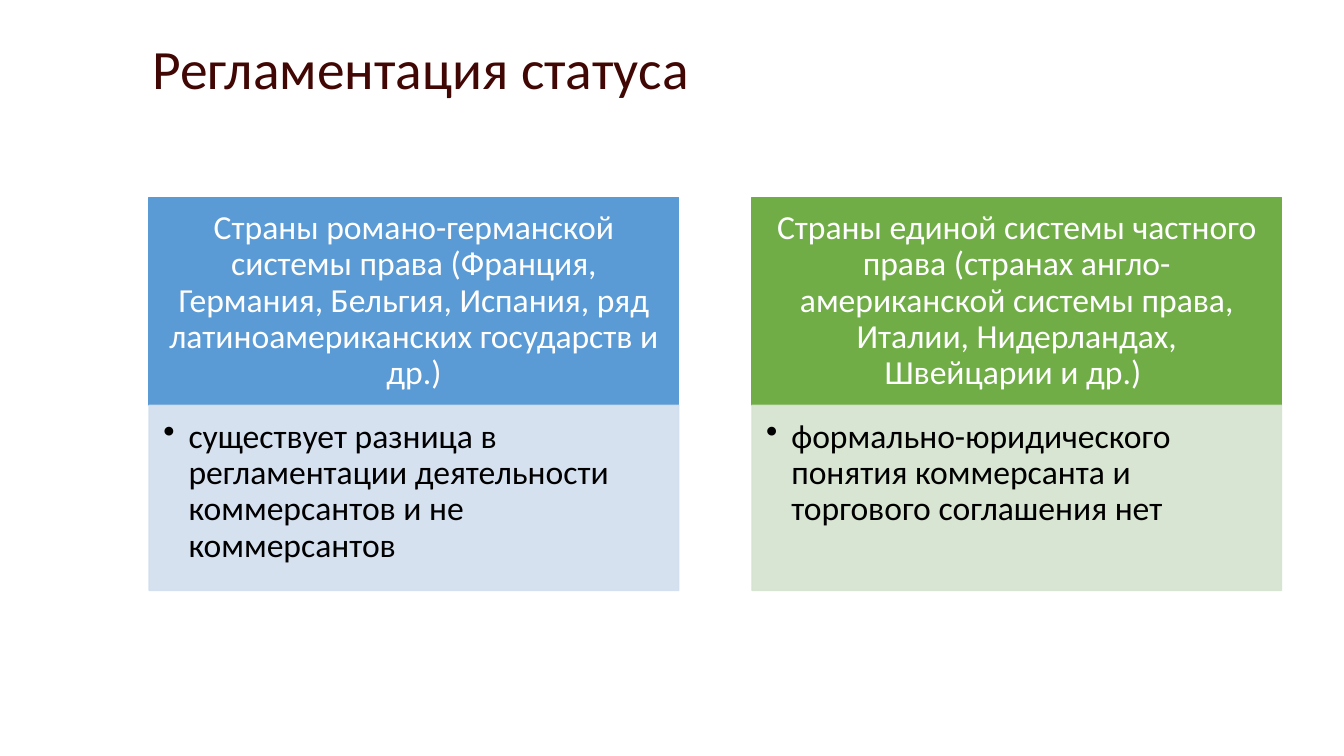
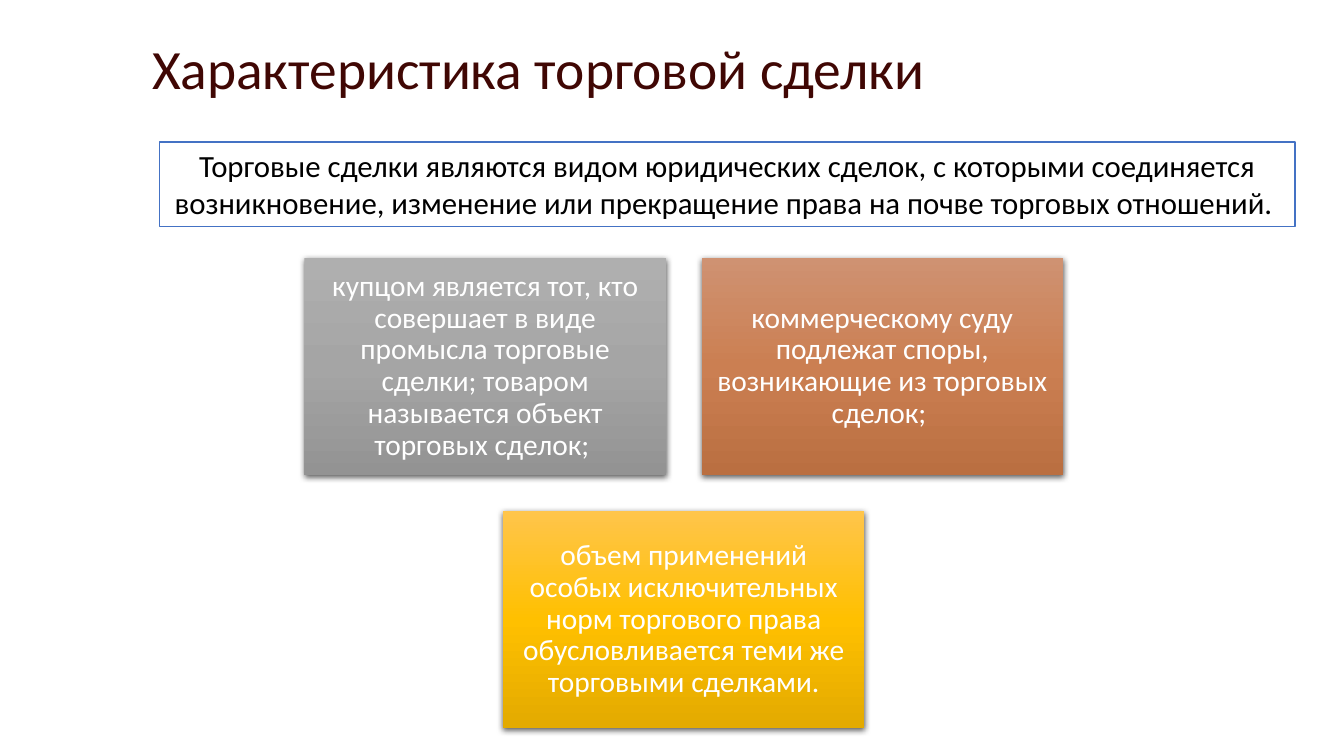
from pptx import Presentation
from pptx import util as u
from pptx.dml.color import RGBColor
from pptx.enum import shapes, text
from pptx.oxml.ns import qn
from copy import deepcopy
from lxml import etree

FONT = "Calibri"
COLORS = {
    "title": "400704", "ink": "000000", "paper": "FFFFFF", "frame": "4472C4",
    "blue": "5B9BD5", "pale blue": "D2DEEF",
    "green": "70AD47", "pale green": "D5E3CF",
}
GRADIENTS = {
    "gray": ("AFAFAF", "A5A5A5", "939393"),
    "copper": ("CF9272", "CB7F52", "BA6F41"),
    "gold": ("FFC54B", "FFC000", "E3AA00"),
}


def rgb(name):
    return RGBColor.from_string(COLORS[name])


def write(frame, words, size, color="ink", align=text.PP_ALIGN.CENTER,
          anchor=text.MSO_ANCHOR.MIDDLE, spacing=0.9, insets=None, bullet=False):
    """Fill a text frame; insets are left, top, right, bottom in inches."""
    frame.word_wrap = True
    frame.auto_size = text.MSO_AUTO_SIZE.NONE
    frame.vertical_anchor = anchor
    if insets:
        (frame.margin_left, frame.margin_top,
         frame.margin_right, frame.margin_bottom) = map(u.Inches, insets)
    paragraph = frame.paragraphs[0]
    paragraph.alignment = align
    paragraph.line_spacing = spacing
    if bullet:
        props = paragraph._p.get_or_add_pPr()
        props.set("marL", str(u.Inches(0.25)))
        props.set("indent", str(u.Inches(-0.25)))
        etree.SubElement(props, qn("a:buChar"), char="•")
    run = paragraph.add_run()
    run.text = words
    run.font.name = FONT
    run.font.size = u.Pt(size)
    run.font.color.rgb = rgb(color)


class Deck:
    """Shared style and the current slide; places are percentages of its size."""

    def __init__(self):
        self.prs = Presentation()
        self.prs.slide_width = u.Inches(13.333)
        self.prs.slide_height = u.Inches(7.5)
        self.slide = None

    def place(self, x, y, width, height):
        across, down = self.prs.slide_width / 100, self.prs.slide_height / 100
        return [round(n) for n in (x * across, y * down, width * across, height * down)]

    def start(self, heading):
        self.slide = self.prs.slides.add_slide(self.prs.slide_layouts[5])
        title = self.slide.shapes.title
        title.left, title.top, title.width, title.height = self.place(10.6, 5.7, 86.2, 7.6)
        write(title.text_frame, heading, 39.6, color="title", align=text.PP_ALIGN.LEFT)

    def rect(self, at):
        box = self.slide.shapes.add_shape(shapes.MSO_SHAPE.RECTANGLE, *self.place(*at))
        box.shadow.inherit = False
        return box

    def panel(self, at, words, fill, line=None, opacity=100, size=24, **style):
        box = self.rect(at)
        box.fill.solid()
        box.fill.fore_color.rgb = rgb(fill)
        box.line.color.rgb = rgb(line or fill)
        box.line.width = u.Pt(1)
        if opacity < 100:
            for color in box._element.spPr.iter(qn("a:srgbClr")):
                etree.SubElement(color, qn("a:alpha"), val=str(opacity * 1000))
        write(box.text_frame, words, size, **style)

    def column(self, x, heading, point, color):
        """A coloured heading with a pale bulleted panel below it."""
        top, width, head, body = 26.1, 39.4, 27.5, 24.5
        self.panel((x, top, width, head), heading, color, color="paper",
                   insets=(0.19, 0.11, 0.19, 0.11))
        self.panel((x, top + head, width, body), point, "pale " + color, opacity=90,
                   align=text.PP_ALIGN.LEFT, anchor=text.MSO_ANCHOR.TOP,
                   insets=(0.14, 0.14, 0.19, 0.21), bullet=True)

    def tile(self, at, words, gradient):
        box = self.rect(at)
        box.line.fill.background()
        self.shade(box, GRADIENTS[gradient])
        self.drop_shadow(box)
        write(box.text_frame, words, 21, color="paper", insets=(0.09,) * 4)

    def shade(self, box, stops):
        """Apply a three-stop gradient running from top to bottom."""
        box.fill.gradient()
        box.fill.gradient_angle = 270
        first = next(box._element.spPr.iter(qn("a:gs")))
        first.addnext(deepcopy(first))
        for i, (stop, color) in enumerate(zip(box.fill.gradient_stops, stops)):
            stop.position = i / 2
            stop.color.rgb = RGBColor.from_string(color)

    def drop_shadow(self, box):
        effects = box._element.spPr.find(qn("a:effectLst"))
        shadow = etree.SubElement(effects, qn("a:outerShdw"), blurRad=str(u.Pt(4.5)),
                                  dist=str(u.Pt(1.5)), dir="5400000",
                                  algn="ctr", rotWithShape="0")
        color = etree.SubElement(shadow, qn("a:srgbClr"), val=COLORS["ink"])
        etree.SubElement(color, qn("a:alpha"), val="63000")


def status_slide(deck):
    deck.start("Регламентация статуса")
    systems = [
        ("Страны романо-германской системы права (Франция, Германия, Бельгия, "
         "Испания, ряд латиноамериканских государств и др.)",
         "существует разница в регламентации деятельности коммерсантов и не коммерсантов",
         "blue"),
        ("Страны единой системы частного права (странах англо-американской "
         "системы права, Италии, Нидерландах, Швейцарии и др.) ",
         "формально-юридического понятия коммерсанта и торгового соглашения нет",
         "green"),
    ]
    for i, system in enumerate(systems):
        deck.column(11.1 + i * 44.85, *system)


def deal_slide(deck):
    deck.start("Характеристика торговой сделки")
    deck.panel((11.85, 18.8, 84.5, 11.2),
               "Торговые сделки являются видом юридических сделок, с которыми "
               "соединяется возникновение, изменение или прекращение права на почве "
               "торговых отношений. ",
               "paper", line="frame", size=22, spacing=1, anchor=text.MSO_ANCHOR.TOP)
    step_x, step_y = 29.55, 33.5
    features = [
        (0, 0, "gray", "купцом является тот, кто совершает в виде промысла торговые "
         "сделки; товаром называется объект торговых сделок; "),
        (1, 0, "copper", "коммерческому суду подлежат споры, возникающие из "
         "торговых сделок; "),
        (0.5, 1, "gold", "объем применений особых исключительных норм торгового права "
         "обусловливается теми же торговыми сделками."),
    ]
    for col, row, gradient, words in features:
        deck.tile((22.65 + col * step_x, 34.1 + row * step_y, 26.9, 28.7),
                  words, gradient)


def main():
    deck = Deck()
    status_slide(deck)
    deal_slide(deck)
    deck.prs.save("out.pptx")


if __name__ == "__main__":
    main()
